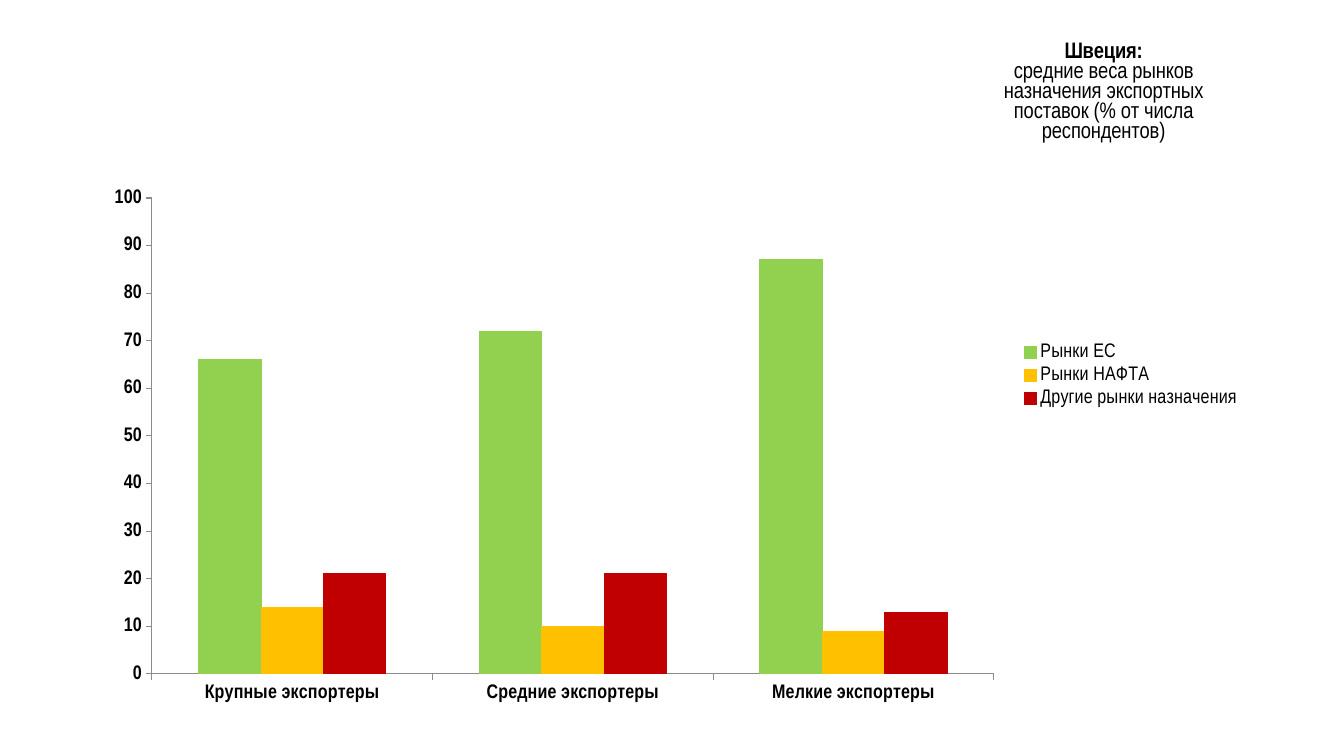
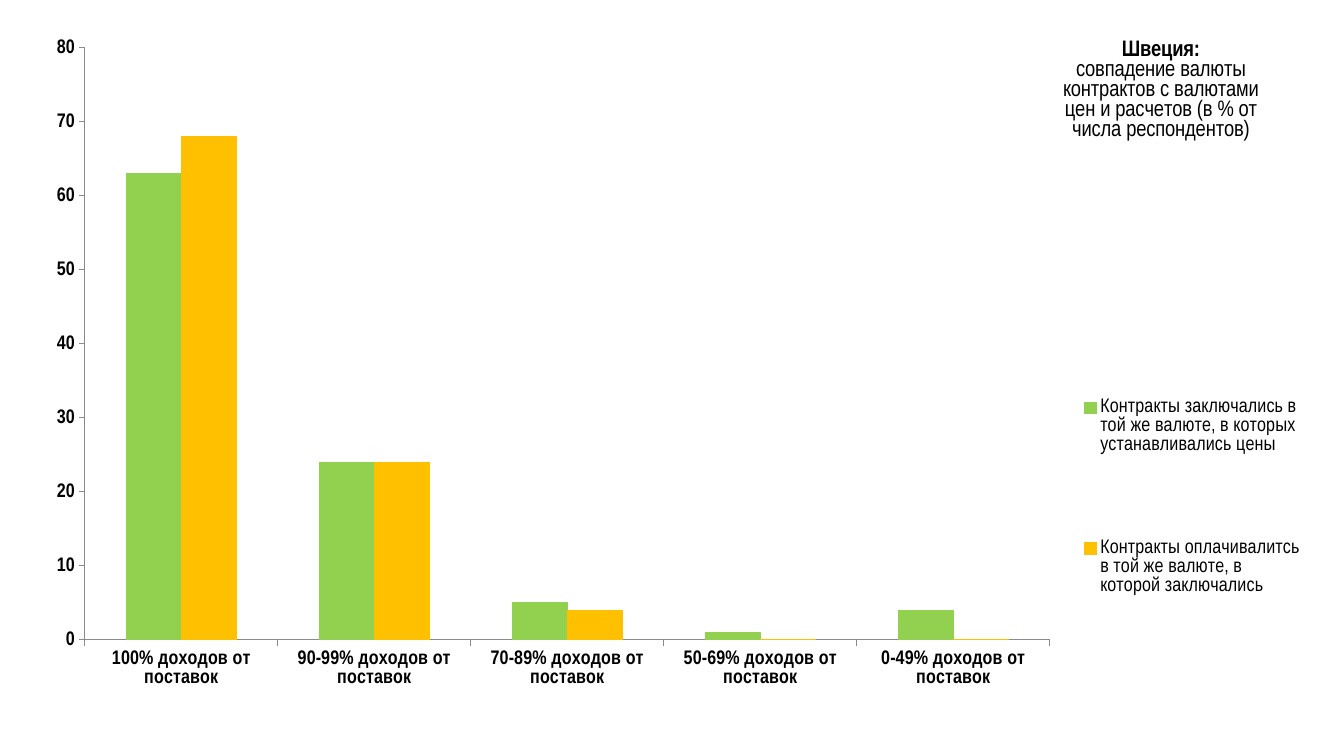
from pptx import Presentation
from pptx.chart.data import CategoryChartData
from pptx.dml.color import RGBColor
from pptx.enum.chart import XL_CHART_TYPE as ChartType, XL_LEGEND_POSITION as LegendPosition
from pptx.enum.chart import XL_TICK_MARK as TickMark
from pptx.enum.text import PP_ALIGN as Align
from pptx.oxml import parse_xml
from pptx.oxml.ns import nsdecls, qn
from pptx.util import Pt

PX = 914400 / 100.8
SLIDE_SIZE = 1344, 756
COLORS = {"text": "000000", "axis": "8B8B8B",
          "green": "92D050", "amber": "FFC000", "red": "C00000"}
SERIES_COLORS = "green", "amber", "red"
FONT = "Arial Narrow"
BODY = {"name": FONT, "size": Pt(14), "bold": False}
TICKS = {"name": FONT, "size": Pt(14), "bold": True}
HEADING = {"name": FONT, "size": Pt(16), "bold": True}
SUBHEADING = {"name": FONT, "size": Pt(16), "bold": False}
AXIS = {"has_major_gridlines": False, "major_tick_mark": TickMark.OUTSIDE,
        "minor_tick_mark": TickMark.NONE}

# Content: boxes are left, top, width, height in px on the slide
CHARTS = [
    {
        "frame": (93, 35, 1159, 681),
        "plot": (152, 198, 842, 476),
        "title_box": (1001, 38),
        "legend_box": None,
        "title": ["Швеция:", "средние веса рынков", "назначения экспортных",
                  "поставок (% от числа", "респондентов)"],
        "maximum": 100,
        "categories": ["Крупные экспортеры", "Средние экспортеры", "Мелкие экспортеры"],
        "series": [
            ("Рынки ЕС", (66, 72, 87)),
            ("Рынки НАФТА", (14, 10, 9)),
            ("Другие рынки назначения", (21, 21, 13)),
        ],
    },
    {
        "frame": (32, 29, 1279, 681),
        "plot": (85, 48, 965, 592),
        "title_box": (1060, 36),
        "legend_box": (1087, 314, 222, 366),
        "title": ["Швеция:", "совпадение валюты", "контрактов с валютами",
                  "цен и расчетов (в % от", "числа респондентов)"],
        "maximum": 80,
        "categories": [f"{share}% доходов от поставок"
                       for share in ("100", "90-99", "70-89", "50-69", "0-49")],
        "series": [
            ("Контракты заключались в той же валюте, в которых устанавливались цены",
             (63, 24, 5, 1, 4)),
            ("Контракты оплачивалитсь в той же валюте, в которой заключались",
             (68, 24, 4, 0, 0)),
        ],
    },
]


def emu(*lengths):
    return [round(length * PX) for length in lengths]


def rgb(name):
    return RGBColor.from_string(COLORS[name])


def set_all(target, values):
    for name, value in values.items():
        setattr(target, name, value)


def style_font(font, values):
    set_all(font, values)
    font.color.rgb = rgb("text")


def place(element, index, box, frame, inner=False):
    """Give a chart part a manual layout, as fractions of the chart frame."""
    for old in element.findall(qn("c:layout")):
        element.remove(old)
    left, top, width, height = frame
    fractions = [(box[0] - left) / width, (box[1] - top) / height]
    fractions += [length / whole for length, whole in zip(box[2:], (width, height))]
    target = '<c:layoutTarget val="inner"/>' if inner else ""
    modes = '<c:xMode val="edge"/><c:yMode val="edge"/>'
    sizes = "".join(f'<c:{key} val="{value:.4f}"/>' for key, value in zip("xywh", fractions))
    element.insert(index, parse_xml(
        f'<c:layout {nsdecls("c")}><c:manualLayout>{target}{modes}{sizes}'
        "</c:manualLayout></c:layout>"))


def add_title(chart, lines, box, frame):
    chart.has_title = True
    title = chart.chart_title
    text_frame = title.text_frame
    for number, line in enumerate(lines):
        paragraph = text_frame.add_paragraph() if number else text_frame.paragraphs[0]
        paragraph.alignment = Align.CENTER
        run = paragraph.add_run()
        run.text = line
        style_font(run.font, SUBHEADING if number else HEADING)
    element = title._element
    place(element, 1, box, frame)
    for overlay in element.findall(qn("c:overlay")):
        overlay.set("val", "1")


def add_column_chart(slide, content):
    frame = content["frame"]
    data = CategoryChartData()
    data.categories = content["categories"]
    for name, values in content["series"]:
        data.add_series(name, values)
    chart = slide.shapes.add_chart(ChartType.COLUMN_CLUSTERED, *emu(*frame), data).chart
    style_font(chart.font, BODY)
    add_title(chart, content["title"], content["title_box"], frame)

    # Columns
    plot = chart.plots[0]
    set_all(plot, {"gap_width": 150, "overlap": 0, "vary_by_categories": False})
    for series, color in zip(plot.series, SERIES_COLORS):
        series.format.fill.solid()
        series.format.fill.fore_color.rgb = rgb(color)
        series.format.line.color.rgb = rgb(color)
        series.format.line.width = Pt(0.75)
    place(chart._chartSpace.chart.plotArea, 0, content["plot"], frame, inner=True)

    # Axes
    for axis in (chart.category_axis, chart.value_axis):
        set_all(axis, AXIS)
        style_font(axis.tick_labels.font, TICKS)
        axis.format.line.color.rgb = rgb("axis")
        axis.format.line.width = Pt(0.75)
    set_all(chart.value_axis, {"minimum_scale": 0, "maximum_scale": content["maximum"],
                               "major_unit": 10})
    set_all(chart.value_axis.tick_labels, {"number_format": "0",
                                           "number_format_is_linked": False})

    # Legend
    chart.has_legend = True
    legend = chart.legend
    set_all(legend, {"position": LegendPosition.RIGHT, "include_in_layout": False})
    style_font(legend.font, BODY)
    if content["legend_box"]:
        place(legend._element, 1, content["legend_box"], frame)


def main():
    presentation = Presentation()
    presentation.slide_width, presentation.slide_height = emu(*SLIDE_SIZE)
    for content in CHARTS:
        slide = presentation.slides.add_slide(presentation.slide_layouts[6])
        add_column_chart(slide, content)
    presentation.save("out.pptx")


if __name__ == "__main__":
    main()
